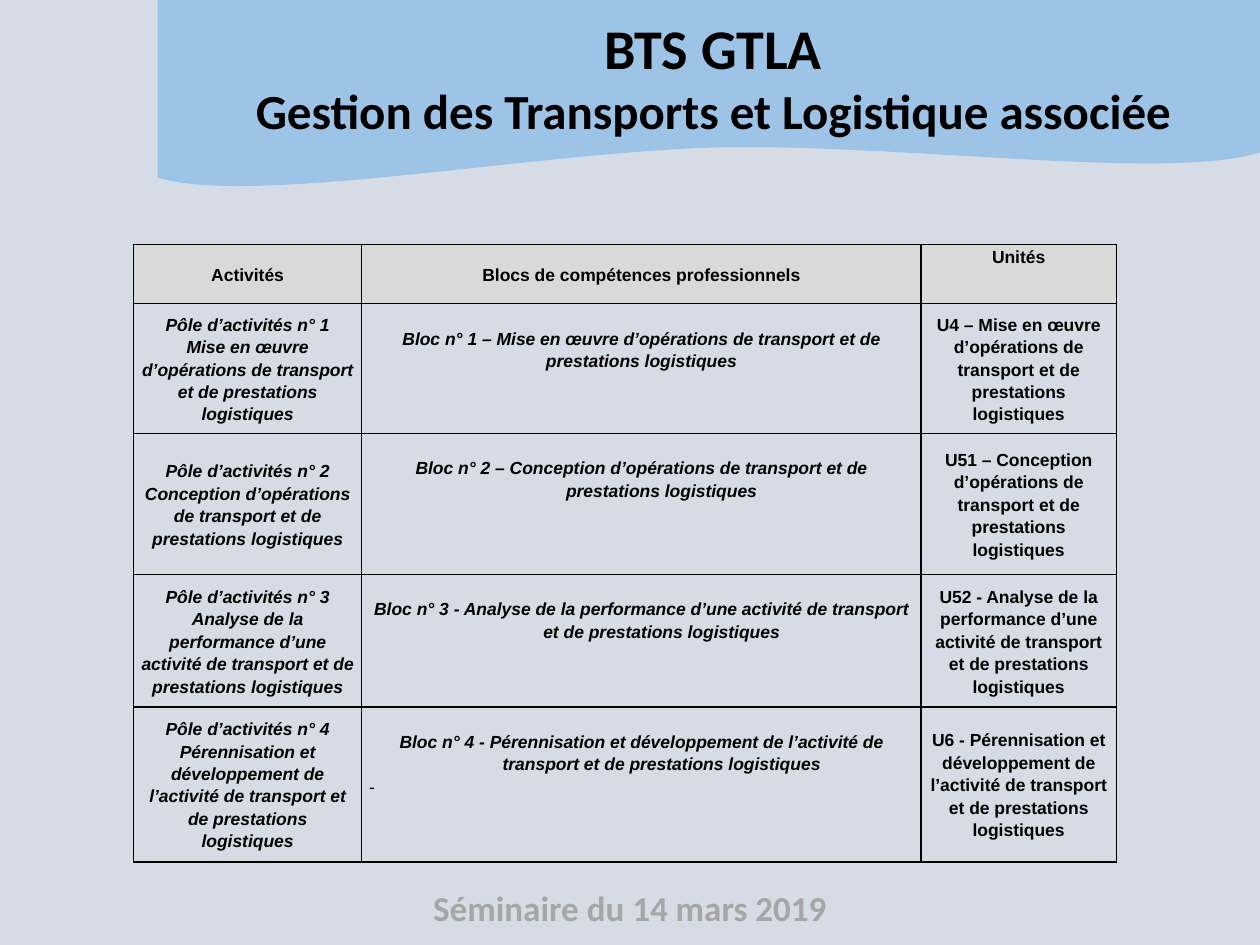
from lxml.etree import SubElement
from pptx import Presentation
from pptx.dml.color import RGBColor
from pptx.enum.text import MSO_ANCHOR, PP_ALIGN
from pptx.oxml.ns import qn
from pptx.util import Inches, Pt

# Content
TITLE = [("BTS GTLA", 32), ("Gestion des Transports et Logistique associée", 28)]
FOOTER = [("Séminaire du 14 mars 2019", 20)]
HEADERS = ["Activités", "Blocs de compétences professionnels", "Unités"]
# Unit code, separator, subject shared by the three columns
POLES = [
    ("U4", "–", "Mise en œuvre d’opérations de transport et de prestations logistiques"),
    ("U51", "–", "Conception d’opérations de transport et de prestations logistiques"),
    ("U52", "-", "Analyse de la performance d’une activité de transport et de prestations logistiques"),
    ("U6", "-", "Pérennisation et développement de l’activité de transport et de prestations logistiques"),
]

# Look and grid
COLORS = {"bg": "D6DCE5", "wave": "9DC3E6", "header": "D9D9D9",
          "ink": "000000", "footer": "A6A6A6"}
W, H = 10, 7.5
COLS = [1.81, 4.44, 1.55]
ROWS = [0.47, 1.03, 1.12, 1.05, 1.23]
TABLE_AT = (1.06, 1.94)
LINE_GAP = 0.18
WAVE_LEFT = 1.25
WAVE_START = (W, 1.21)
WAVE_CURVES = [((9.29, 1.44), (7.16, 1.14), (5.7, 1.17)),
               ((4.24, 1.21), (1.99, 1.64), (WAVE_LEFT, 1.41))]
STEPS = 24


def rgb(name):
    return RGBColor.from_string(COLORS[name])


def add_run(p, text, size, font, color="ink", bold=True, italic=False):
    r = p.add_run()
    r.text = text
    f = r.font
    f.name, f.size, f.bold, f.italic = font, Pt(size), bold, italic
    f.color.rgb = rgb(color)


def add_text(s, box, lines, color="ink"):
    tf = s.shapes.add_textbox(*map(Inches, box)).text_frame
    tf.word_wrap = True
    for i, (text, size) in enumerate(lines):
        p = tf.paragraphs[0] if i == 0 else tf.add_paragraph()
        p.alignment = PP_ALIGN.CENTER
        add_run(p, text, size, "Calibri", color)


def bezier(points, t):
    weights = ((1 - t) ** 3, 3 * t * (1 - t) ** 2, 3 * t * t * (1 - t), t ** 3)
    return tuple(sum(w * pt[axis] for w, pt in zip(weights, points)) for axis in (0, 1))


def add_wave(s):
    outline, start = [(W, 0), WAVE_START], WAVE_START
    for curve in WAVE_CURVES:
        outline += [bezier((start, *curve), k / STEPS) for k in range(1, STEPS + 1)]
        start = curve[-1]
    builder = s.shapes.build_freeform(Inches(WAVE_LEFT), 0)
    builder.add_line_segments([(Inches(x), Inches(y)) for x, y in outline], close=True)
    sp = builder.convert_to_shape()
    sp.shadow.inherit = False
    sp.fill.solid()
    sp.fill.fore_color.rgb = rgb("wave")
    sp.line.fill.background()


def add_borders(cell):
    tcPr = cell._tc.get_or_add_tcPr()
    for side in ("lnL", "lnR", "lnT", "lnB"):
        ln = SubElement(tcPr, qn(f"a:{side}"), w=str(Pt(1)))
        fill = SubElement(ln, qn("a:solidFill"))
        SubElement(fill, qn("a:srgbClr"), val=COLORS["ink"])


def fill_cell(cell, lines, italic=False, middle=True, top=0, hang=0):
    add_borders(cell)
    cell.margin_left = cell.margin_right = Inches(0.06)
    cell.margin_top, cell.margin_bottom = Inches(top), 0
    cell.vertical_anchor = MSO_ANCHOR.MIDDLE if middle else MSO_ANCHOR.TOP
    cell.fill.background()
    tf = cell.text_frame
    for i, text in enumerate(lines):
        p = tf.paragraphs[0] if i == 0 else tf.add_paragraph()
        dash = text == "-"
        p.alignment = PP_ALIGN.LEFT if dash else PP_ALIGN.CENTER
        p.line_spacing = 1.15
        if hang and not dash:
            pPr = p._p.get_or_add_pPr()
            pPr.set("marL", str(Inches(hang)))
            pPr.set("indent", str(-Inches(hang)))
        add_run(p, text, 10, "Arial", bold=not dash, italic=italic and not dash)


def add_poles_table(s):
    size = (sum(COLS), sum(ROWS))
    table = s.shapes.add_table(len(ROWS), len(COLS),
                               *map(Inches, TABLE_AT + size)).table
    table.first_row = table.horz_banding = False
    for col, width in zip(table.columns, COLS):
        col.width = Inches(width)
    for row, height in zip(table.rows, ROWS):
        row.height = Inches(height)
    # Header row
    for c, text in enumerate(HEADERS):
        cell = table.cell(0, c)
        fill_cell(cell, [text], middle=c < 2)
        cell.fill.solid()
        cell.fill.fore_color.rgb = rgb("header")
    # One row per pole
    for n, (unit, sep, subject) in enumerate(POLES, 1):
        block = [f"Bloc n° {n} {sep} {subject}"]
        if n == len(POLES):
            block.append("-")
        fill_cell(table.cell(n, 0), [f"Pôle d’activités n° {n}", subject], italic=True)
        fill_cell(table.cell(n, 1), block, italic=True, middle=False,
                  top=LINE_GAP, hang=0.32 if n > 1 else 0)
        fill_cell(table.cell(n, 2), [f"{unit} {sep} {subject}"])


def main():
    prs = Presentation()
    prs.slide_width, prs.slide_height = Inches(W), Inches(H)
    s = prs.slides.add_slide(prs.slide_layouts[6])
    s.background.fill.solid()
    s.background.fill.fore_color.rgb = rgb("bg")
    add_text(s, (W / 4, 6.99, W / 2, 0.44), FOOTER, "footer")
    add_wave(s)
    add_text(s, (1.87, 0.06, 7.58, 1.11), TITLE)
    add_poles_table(s)
    prs.save("out.pptx")


if __name__ == "__main__":
    main()
